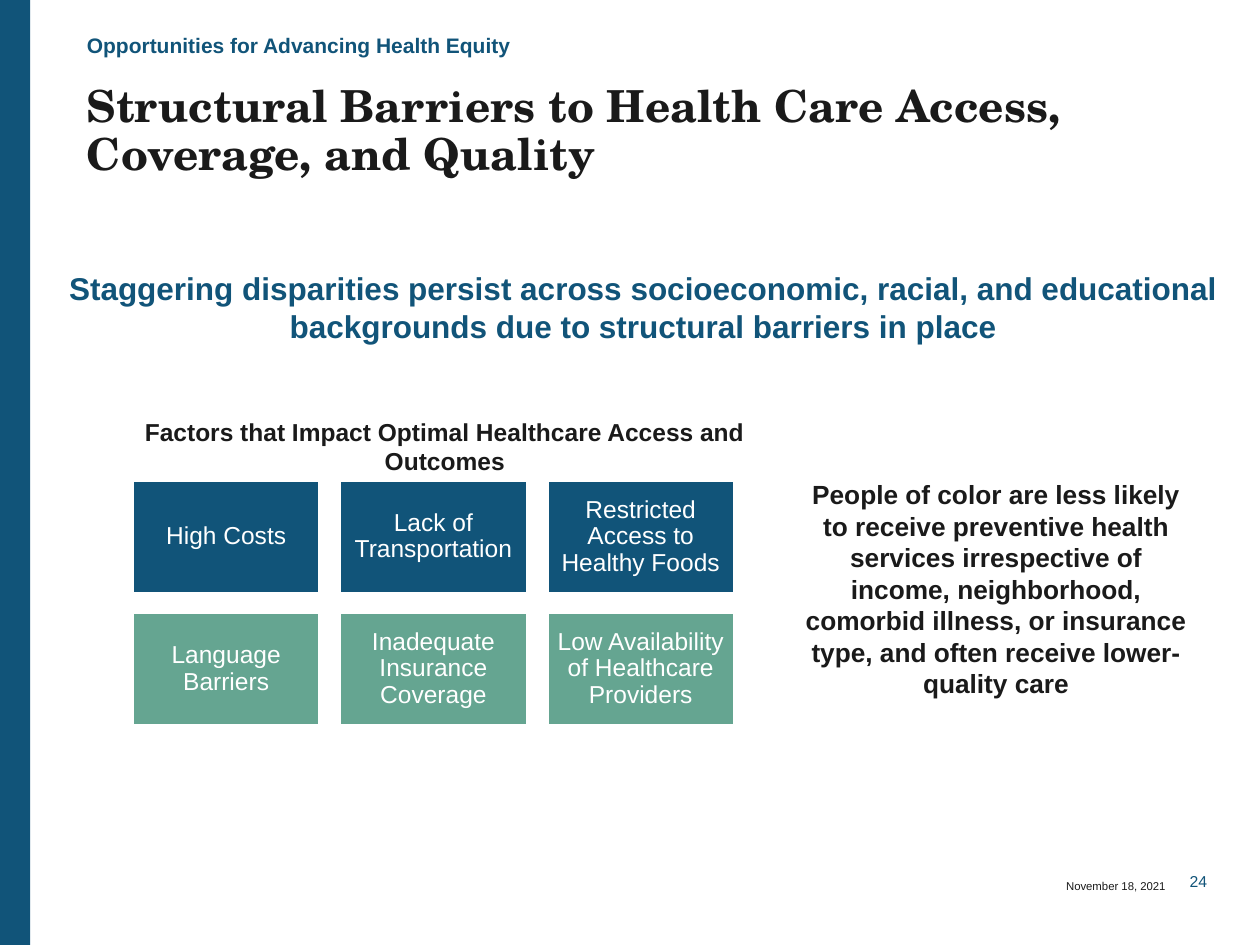
from dataclasses import dataclass

from pptx import Presentation
from pptx.dml.color import RGBColor
from pptx.enum import shapes, text
from pptx.util import Inches, Pt

COLORS = {"blue": "115479", "green": "65A591", "ink": "1A1A1A", "white": "FFFFFF"}
ALIGN = text.PP_ALIGN
ANCHOR = text.MSO_ANCHOR


@dataclass
class Box:
    left: float
    top: float
    width: float
    height: float

    def lengths(self):
        return [Inches(v) for v in (self.left, self.top, self.width, self.height)]


@dataclass
class FactorRow:
    color: str
    labels: tuple[str, ...]


FACTOR_ROWS = (
    FactorRow("blue", ("High Costs", "Lack of Transportation",
                       "Restricted Access to Healthy Foods")),
    FactorRow("green", ("Language Barriers", "Inadequate Insurance Coverage",
                        "Low Availability of Healthcare Providers")),
)
FIRST_CARD = Box(1.05, 3.81, 1.49, 0.9)
CARD_STEP_X, CARD_STEP_Y = 1.645, 1.05


def write(sp, content: str, *, size: float, color: str = "ink", font: str = "Arial",
          bold: bool = False, align=ALIGN.LEFT, anchor=ANCHOR.TOP,
          inset_x: float = 0, inset_y: float = 0, line_spacing: float = 1.0) -> None:
    tf = sp.text_frame
    tf.word_wrap = True
    tf.auto_size = text.MSO_AUTO_SIZE.NONE
    tf.vertical_anchor = anchor
    tf.margin_left = tf.margin_right = Inches(inset_x)
    tf.margin_top = tf.margin_bottom = Inches(inset_y)
    p = tf.paragraphs[0]
    p.alignment = align
    p.line_spacing = line_spacing
    p.space_before = Pt(0)
    r = p.add_run()
    r.text = content
    r.font.name = font
    r.font.size = Pt(size)
    r.font.bold = bold
    r.font.color.rgb = RGBColor.from_string(COLORS[color])


def add_text(s, box: Box, content: str, **style) -> None:
    write(s.shapes.add_textbox(*box.lengths()), content, **style)


def add_rect(s, box: Box, color: str):
    sp = s.shapes.add_shape(shapes.MSO_SHAPE.RECTANGLE, *box.lengths())
    sp.shadow.inherit = False
    sp.fill.solid()
    sp.fill.fore_color.rgb = RGBColor.from_string(COLORS[color])
    sp.line.fill.background()
    return sp


def add_title(s, box: Box, content: str) -> None:
    sp = s.shapes.title
    sp.left, sp.top, sp.width, sp.height = box.lengths()
    write(sp, content, size=25.2, font="TeX Gyre Schola", bold=True, line_spacing=0.9)


def add_factor_cards(s) -> None:
    for i, row in enumerate(FACTOR_ROWS):
        for j, label in enumerate(row.labels):
            box = Box(FIRST_CARD.left + j * CARD_STEP_X, FIRST_CARD.top + i * CARD_STEP_Y,
                      FIRST_CARD.width, FIRST_CARD.height)
            sp = add_rect(s, box, row.color)
            sp.line.color.rgb = RGBColor.from_string(COLORS["white"])
            sp.line.width = Pt(2)
            write(sp, label, size=14, color="white", align=ALIGN.CENTER,
                  anchor=ANCHOR.MIDDLE, inset_x=0.06, inset_y=0.06, line_spacing=0.9)


def main() -> None:
    prs = Presentation()
    prs.slide_width, prs.slide_height = Inches(10), Inches(7.5)
    s = prs.slides.add_slide(prs.slide_layouts[5])

    add_rect(s, Box(0, 0, 0.24, 7.5), "blue")
    add_title(s, Box(0.69, 0.67, 8.85, 0.8),
              "Structural Barriers to Health Care Access, Coverage, and Quality")
    add_text(s, Box(0.69, 0.19, 8.66, 0.27), "Opportunities for Advancing Health Equity",
             size=12, color="blue", bold=True, anchor=ANCHOR.BOTTOM)
    add_text(s, Box(0.54, 2.01, 9.13, 0.85),
             "Staggering disparities persist across socioeconomic, racial, and educational "
             "backgrounds due to structural barriers in place",
             size=18, color="blue", bold=True, align=ALIGN.CENTER, anchor=ANCHOR.MIDDLE)
    add_text(s, Box(6.28, 3.75, 3.25, 1.62),
             "People of color are less likely to receive preventive health services "
             "irrespective of income, neighborhood, comorbid illness, or insurance type, "
             "and often receive lower-quality care",
             size=15, bold=True, align=ALIGN.CENTER, inset_x=0.1, inset_y=0.05)
    add_factor_cards(s)
    add_text(s, Box(0.87, 3.31, 5.32, 0.68),
             "Factors that Impact Optimal Healthcare Access and Outcomes",
             size=14, bold=True, align=ALIGN.CENTER)
    add_text(s, Box(5.97, 6.93, 3.38, 0.3), "November 18, 2021",
             size=6.5, align=ALIGN.RIGHT, inset_x=0.1, inset_y=0.05)
    add_text(s, Box(9.27, 6.88, 0.31, 0.22), "24",
             size=9, color="blue", align=ALIGN.RIGHT, anchor=ANCHOR.MIDDLE)

    prs.save("out.pptx")


if __name__ == "__main__":
    main()
